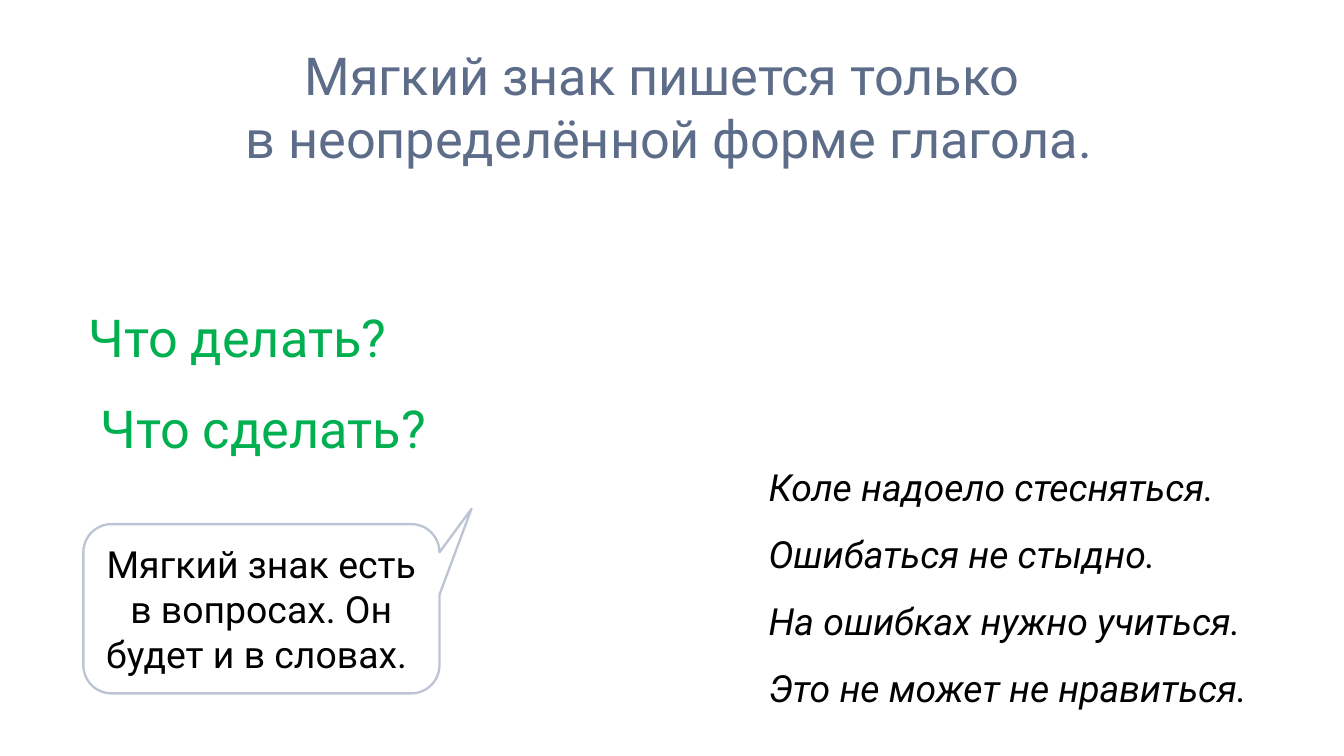
from lxml import etree
from pptx import Presentation
from pptx.dml.color import RGBColor
from pptx.enum.shapes import MSO_SHAPE
from pptx.enum.text import MSO_ANCHOR, PP_ALIGN
from pptx.oxml.ns import qn
from pptx.util import Inches, Pt

ROUNDED = MSO_SHAPE.ROUNDED_RECTANGLE
CALLOUT = MSO_SHAPE.ROUNDED_RECTANGULAR_CALLOUT
MIDDLE = MSO_ANCHOR.MIDDLE
LEFT, CENTER = PP_ALIGN.LEFT, PP_ALIGN.CENTER

SLATE = RGBColor(0x5D, 0x6C, 0x89)
GREEN = RGBColor(0x00, 0xB0, 0x50)
NAVY = RGBColor(0x00, 0x20, 0x60)
BLACK = RGBColor(0, 0, 0)
WHITE = RGBColor(255, 255, 255)

FONT = "Roboto"
LARGE, NORMAL = 28, 20
WIDTH = Inches(10)
HEIGHT = WIDTH * 9 // 16

TITLE = ["Мягкий знак пишется только ", "в неопределённой форме глагола."]
QUESTIONS = [
    ("Что делать?", (0.53, 2.08, 3.53, 0.61)),
    ("Что сделать?", (0.62, 2.76, 3.69, 0.61)),
]
HINT = "Мягкий знак есть в вопросах. Он будет и в словах. "
EXAMPLES = [
    "Коле надоело стесняться.",
    "Ошибаться не стыдно.",
    "На ошибках нужно учиться.",
    "Это не может не нравиться.",
]


def write(shape, lines, size, color, align=LEFT, spacing=1.0, italic=False):
    frame = shape.text_frame
    frame.word_wrap = True
    frame.vertical_anchor = MIDDLE
    frame.text = "\n".join(lines)
    for paragraph in frame.paragraphs:
        paragraph.alignment = align
        paragraph.line_spacing = spacing
        font = paragraph.font
        font.name, font.size, font.italic = FONT, Pt(size), italic
        font.color.rgb = color


def add_text(slide, box, lines, size, color, **style):
    shape = slide.shapes.add_textbox(*map(Inches, box))
    write(shape, lines, size, color, **style)


def add_question(slide, text, box):
    shape = slide.shapes.add_shape(ROUNDED, *map(Inches, box))
    shape.shadow.inherit = False
    shape.fill.background()
    shape.line.fill.background()
    write(shape, [text], LARGE, GREEN, spacing=1.5)


def add_hint(slide, box):
    shape = slide.shapes.add_shape(CALLOUT, *map(Inches, box))
    shape.shadow.inherit = False
    shape.adjustments[0], shape.adjustments[1] = 0.59, -0.59
    shape.fill.solid()
    shape.fill.fore_color.rgb = WHITE
    shape.line.color.rgb = NAVY
    shape.line.width = Pt(1.25)
    line_color = shape.line._ln.find(".//" + qn("a:srgbClr"))
    etree.SubElement(line_color, qn("a:alpha"), val="25000")
    write(shape, [HINT], NORMAL, BLACK, align=CENTER)


def main():
    presentation = Presentation()
    presentation.slide_width = WIDTH
    presentation.slide_height = HEIGHT
    slide = presentation.slides.add_slide(presentation.slide_layouts[6])

    add_text(slide, (0.87, 0.3, 8.21, 0.98), TITLE, LARGE, SLATE, align=CENTER)
    for text, box in QUESTIONS:
        add_question(slide, text, box)
    add_hint(slide, (0.62, 3.9, 2.65, 1.26))
    add_text(slide, (5.62, 3.06, 3.99, 2.45), EXAMPLES, NORMAL, BLACK,
             spacing=1.5, italic=True)

    presentation.save("out.pptx")


if __name__ == "__main__":
    main()
